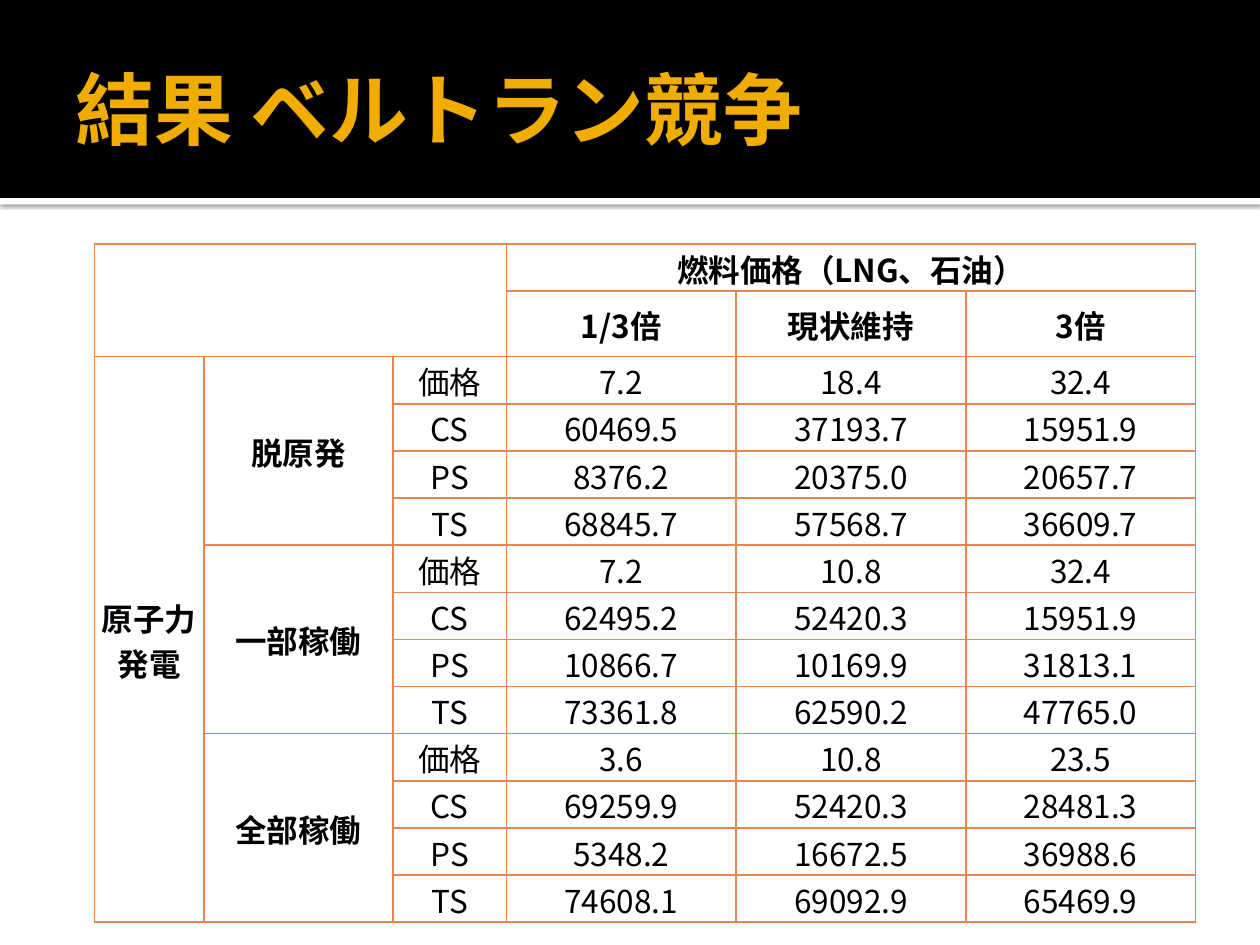
from pptx import Presentation
from pptx.dml.color import RGBColor
from pptx.enum.shapes import MSO_SHAPE as SHAPE
from pptx.enum.text import MSO_ANCHOR as ANCHOR, PP_ALIGN as ALIGN
from pptx.oxml import parse_xml
from pptx.oxml.ns import nsdecls
from pptx.util import Cm, Pt

COLORS = {"black": "000000", "white": "FFFFFF", "gold": "F0AD00", "border": "E88651"}
LATIN, JAPANESE = "Cabin", "Noto Sans CJK JP"

MEASURES = ["価格", "CS", "PS", "TS"]
PRICES = ["1/3倍", "現状維持", "3倍"]
RESULTS = {
    "脱原発": [
        ["7.2", "18.4", "32.4"],
        ["60469.5", "37193.7", "15951.9"],
        ["8376.2", "20375.0", "20657.7"],
        ["68845.7", "57568.7", "36609.7"],
    ],
    "一部稼働": [
        ["7.2", "10.8", "32.4"],
        ["62495.2", "52420.3", "15951.9"],
        ["10866.7", "10169.9", "31813.1"],
        ["73361.8", "62590.2", "47765.0"],
    ],
    "全部稼働": [
        ["3.6", "10.8", "23.5"],
        ["69259.9", "52420.3", "28481.3"],
        ["5348.2", "16672.5", "36988.6"],
        ["74608.1", "69092.9", "65469.9"],
    ],
}


class SlideBuilder:
    def __init__(self, slide):
        self.s = slide

    def style_run(self, r, size, color, latin, bold):
        r.font.size, r.font.name, r.font.bold = Pt(size), latin, bold
        r.font.color.rgb = RGBColor.from_string(COLORS[color])
        r.font._element.find("{*}latin").addnext(
            parse_xml(f'<a:ea {nsdecls("a")} typeface="{JAPANESE}"/>'))

    def band(self, top, height, color, shadow=False):
        sp = self.s.shapes.add_shape(SHAPE.RECTANGLE, 0, Cm(top), Cm(25.4), Cm(height))
        sp.fill.solid()
        sp.fill.fore_color.rgb = RGBColor.from_string(COLORS[color])
        sp.line.fill.background()
        sp.shadow.inherit = False
        if shadow:
            sp._element.spPr.find("{*}effectLst").append(parse_xml(
                f'<a:outerShdw {nsdecls("a")} blurRad="{Pt(2.5)}" dist="{Pt(0.8)}" '
                f'dir="5400000" algn="t" rotWithShape="0"><a:srgbClr val="{COLORS["black"]}">'
                '<a:alpha val="60000"/></a:srgbClr></a:outerShdw>'))

    def title(self, text, left, top, width, height):
        sp = self.s.shapes.title
        sp.left, sp.top, sp.width, sp.height = map(Cm, (left, top, width, height))
        tf = sp.text_frame
        tf.text = text
        tf.vertical_anchor = ANCHOR.MIDDLE
        tf.margin_left, tf.margin_right = Cm(0.25), Cm(0.13)
        p = tf.paragraphs[0]
        p.alignment = ALIGN.LEFT
        self.style_run(p.runs[0], 45, "gold", LATIN, True)
        # Bring the title in front of the bands
        self.s.shapes._spTree.append(sp._element)

    def table(self, left, top, widths, heights):
        frame = self.s.shapes.add_table(len(heights), len(widths), Cm(left), Cm(top),
                                        Cm(sum(widths)), Cm(sum(heights)))
        table = frame.table
        table.first_row = table.horz_banding = False
        for column, width in zip(table.columns, widths):
            column.width = Cm(width)
        for row, height in zip(table.rows, heights):
            row.height = Cm(height)
        for cell in table.iter_cells():
            self.frame_cell(cell)
        return table

    def frame_cell(self, cell):
        cell.fill.background()
        cell.vertical_anchor = ANCHOR.MIDDLE
        cell.margin_left = cell.margin_right = cell.margin_top = Cm(0.03)
        cell.margin_bottom = 0
        for i, side in enumerate("LRTB"):
            cell._tc.tcPr.insert(i, parse_xml(
                f'<a:ln{side} {nsdecls("a")} w="{Pt(1)}"><a:solidFill>'
                f'<a:srgbClr val="{COLORS["border"]}"/></a:solidFill></a:ln{side}>'))

    def cell(self, table, row, col, text="", rows=1, cols=1, bold=False):
        cell = table.cell(row, col)
        if rows * cols > 1:
            cell.merge(table.cell(row + rows - 1, col + cols - 1))
        cell.text_frame.text = text
        p = cell.text_frame.paragraphs[0]
        p.alignment = ALIGN.CENTER
        for r in p.runs:
            self.style_run(r, 18, "black", JAPANESE, bold)
        return cell


def main():
    prs = Presentation()
    prs.slide_width, prs.slide_height = Cm(25.4), Cm(19.05)
    b = SlideBuilder(prs.slides.add_slide(prs.slide_layouts[5]))

    # Header
    b.band(3.99, 0.13, "white", shadow=True)
    b.band(0, 3.99, "black")
    b.title("結果 ベルトラン競争", 1.27, 0.43, 22.86, 3.48)

    # Table headings
    body_rows = len(RESULTS) * len(MEASURES)
    table = b.table(1.9, 4.92, [2.21, 3.81, 2.29] + [4.63] * 3,
                    [0.89, 1.32] + [0.94] * body_rows)
    b.cell(table, 0, 0, rows=2, cols=3)
    b.cell(table, 0, 3, "燃料価格（LNG、石油）", cols=3, bold=True)
    for col, price in enumerate(PRICES, 3):
        b.cell(table, 1, col, price, bold=True)
    nuclear = b.cell(table, 2, 0, "原子力発電", rows=body_rows, bold=True)
    nuclear._tc.tcPr.set("vert", "eaVert")

    # Results by scenario
    for i, (scenario, values) in enumerate(RESULTS.items()):
        first = 2 + i * len(MEASURES)
        b.cell(table, first, 1, scenario, rows=len(MEASURES), bold=True)
        for row, (measure, numbers) in enumerate(zip(MEASURES, values), first):
            for col, text in enumerate([measure] + numbers, 2):
                b.cell(table, row, col, text)

    prs.save("out.pptx")


if __name__ == "__main__":
    main()
